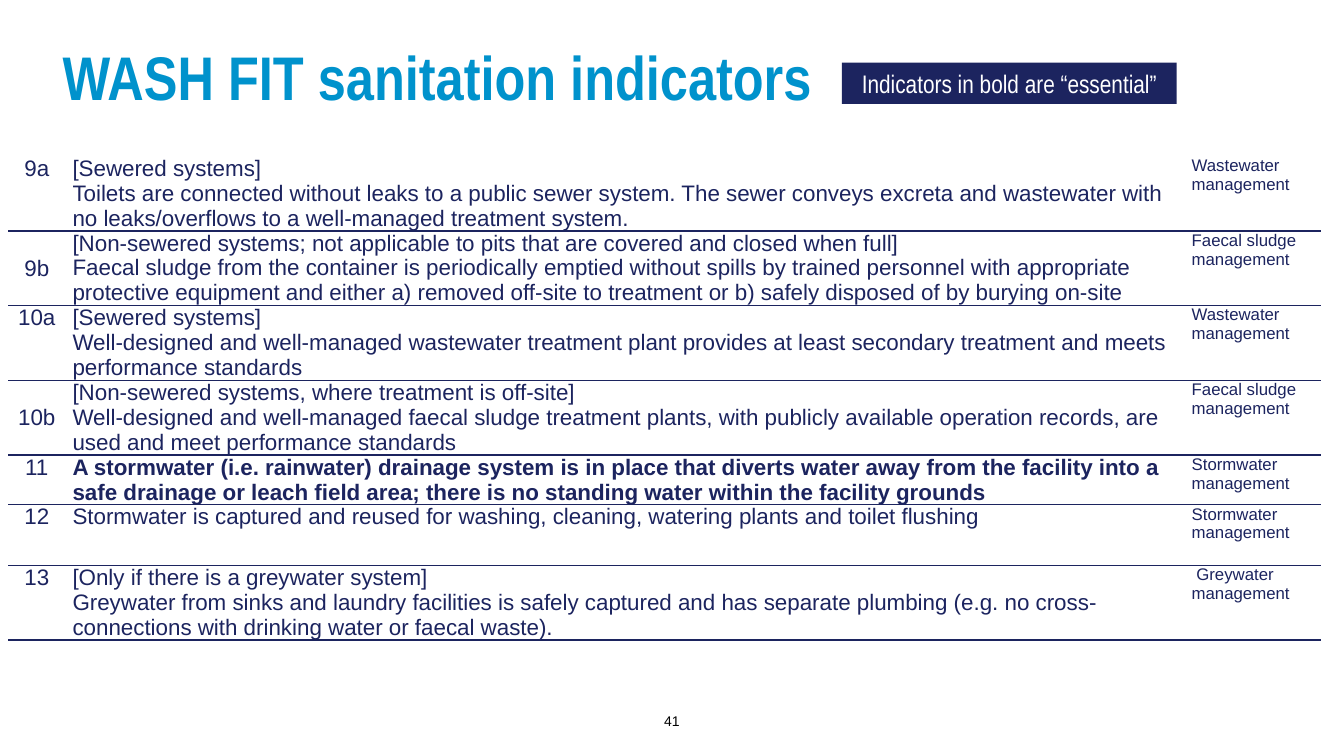
from dataclasses import dataclass

from lxml import etree
from pptx import Presentation
from pptx.dml.color import RGBColor
from pptx.enum import shapes, text
from pptx.oxml import ns
from pptx.util import Inches, Pt


@dataclass(frozen=True)
class Theme:
    navy: str = "1C245F"
    blue: str = "0092CC"
    white: str = "FFFFFF"
    black: str = "000000"
    heading_font: str = "Arial Narrow"
    body_font: str = "Arial"
    title: float = 44
    badge: float = 18.1
    body: float = 16
    topic: float = 12
    number: float = 10


THEME = Theme()
NO_TABLE_STYLE = "{2D5ABB26-0587-4C30-8999-92F81FD0307C}"


def add_lines(frame, lines, size, color, font=THEME.body_font, bold=False,
              align=text.PP_ALIGN.LEFT):
    """Write each line as a paragraph of one formatted run."""
    for index, line in enumerate(lines):
        para = frame.add_paragraph() if index else frame.paragraphs[0]
        para.alignment = align
        span = para.add_run()
        span.text = line
        span.font.name = font
        span.font.size = Pt(size)
        span.font.bold = bold
        span.font.color.rgb = RGBColor.from_string(color)


def add_bottom_border(cell, color):
    border = etree.Element(ns.qn("a:lnB"), w=str(Pt(1)))
    fill = etree.SubElement(border, ns.qn("a:solidFill"))
    etree.SubElement(fill, ns.qn("a:srgbClr"), val=color)
    cell._tc.get_or_add_tcPr().insert(0, border)


deck = Presentation()
deck.slide_width, deck.slide_height = Inches(13.33), Inches(7.5)
page = deck.slides.add_slide(deck.slide_layouts[5])

# Title
title = page.shapes.title
title.left, title.top = Inches(0.52), Inches(0.4)
title.width, title.height = Inches(8.92), Inches(0.79)
title.text_frame.vertical_anchor = text.MSO_ANCHOR.MIDDLE
add_lines(title.text_frame, ["WASH FIT sanitation indicators"], THEME.title,
          THEME.blue, THEME.heading_font, bold=True)
title.text_frame.paragraphs[0].line_spacing = 0.9

# Indicator table: number, height, number anchor, bold, lines, topic
TOP, MIDDLE = text.MSO_ANCHOR.TOP, text.MSO_ANCHOR.MIDDLE
indicators = [
    ("9a", 0.74, TOP, False,
     ["[Sewered systems]",
      "Toilets are connected without leaks to a public sewer system. The sewer conveys "
      "excreta and wastewater with no leaks/overflows to a well-managed treatment system."],
     "Wastewater management"),
    ("9b", 0.74, MIDDLE, False,
     ["[Non-sewered systems; not applicable to pits that are covered and closed when full]",
      "Faecal sludge from the container is periodically emptied without spills by trained "
      "personnel with appropriate protective equipment and either a) removed off-site to "
      "treatment or b) safely disposed of by burying on-site"],
     "Faecal sludge management"),
    ("10a", 0.74, TOP, False,
     ["[Sewered systems]",
      "Well-designed and well-managed wastewater treatment plant provides at least "
      "secondary treatment and meets performance standards"],
     "Wastewater management"),
    ("10b", 0.74, MIDDLE, False,
     ["[Non-sewered systems, where treatment is off-site]",
      "Well-designed and well-managed faecal sludge treatment plants, with publicly "
      "available operation records, are used and meet performance standards"],
     "Faecal sludge management"),
    ("11", 0.49, TOP, True,
     ["A stormwater (i.e. rainwater) drainage system is in place that diverts water away "
      "from the facility into a safe drainage or leach field area; there is no standing "
      "water within the facility grounds"],
     "Stormwater management"),
    ("12", 0.6, TOP, False,
     ["Stormwater is captured and reused for washing, cleaning, watering plants and "
      "toilet flushing"],
     "Stormwater management"),
    ("13", 0.74, TOP, False,
     ["[Only if there is a greywater system]",
      "Greywater from sinks and laundry facilities is safely captured and has separate "
      "plumbing (e.g. no cross-connections with drinking water or faecal waste)."],
     " Greywater management"),
]
column_widths = [0.57, 11.1, 1.35]
table_height = sum(indicator[1] for indicator in indicators)
table = page.shapes.add_table(
    len(indicators), len(column_widths), Inches(0.08), Inches(1.55),
    Inches(sum(column_widths)), Inches(table_height)).table
table.first_row = table.horz_banding = False
table._tbl.tblPr.find(ns.qn("a:tableStyleId")).text = NO_TABLE_STYLE
for column, width in zip(table.columns, column_widths):
    column.width = Inches(width)

for row, (number, height, anchor, bold, lines, topic) in zip(table.rows, indicators):
    row.height = Inches(height)
    number_cell, text_cell, topic_cell = row.cells
    for cell in row.cells:
        cell.margin_left = cell.margin_right = Inches(0.07)
        cell.margin_top = cell.margin_bottom = 0
        cell.fill.background()
        add_bottom_border(cell, THEME.navy)
    number_cell.vertical_anchor = anchor
    add_lines(number_cell.text_frame, [number], THEME.body, THEME.navy,
              align=text.PP_ALIGN.CENTER)
    add_lines(text_cell.text_frame, lines, THEME.body, THEME.navy, bold=bold)
    add_lines(topic_cell.text_frame, [topic], THEME.topic, THEME.navy)

# Page number
number_box = page.shapes.add_textbox(Inches(6.41), Inches(6.95), Inches(0.51), Inches(0.4))
number_box.text_frame.word_wrap = True
number_box.text_frame.vertical_anchor = MIDDLE
add_lines(number_box.text_frame, ["41"], THEME.number, THEME.black,
          align=text.PP_ALIGN.CENTER)

# Legend badge
badge = page.shapes.add_shape(shapes.MSO_SHAPE.RECTANGLE, Inches(8.35), Inches(0.62),
                              Inches(3.32), Inches(0.41))
badge.shadow.inherit = False
badge.fill.solid()
badge.fill.fore_color.rgb = RGBColor.from_string(THEME.navy)
badge.line.fill.background()
badge.text_frame.word_wrap = True
badge.text_frame.vertical_anchor = MIDDLE
add_lines(badge.text_frame, ["Indicators in bold are “essential”"], THEME.badge,
          THEME.white, THEME.heading_font, align=text.PP_ALIGN.CENTER)

deck.save("out.pptx")
